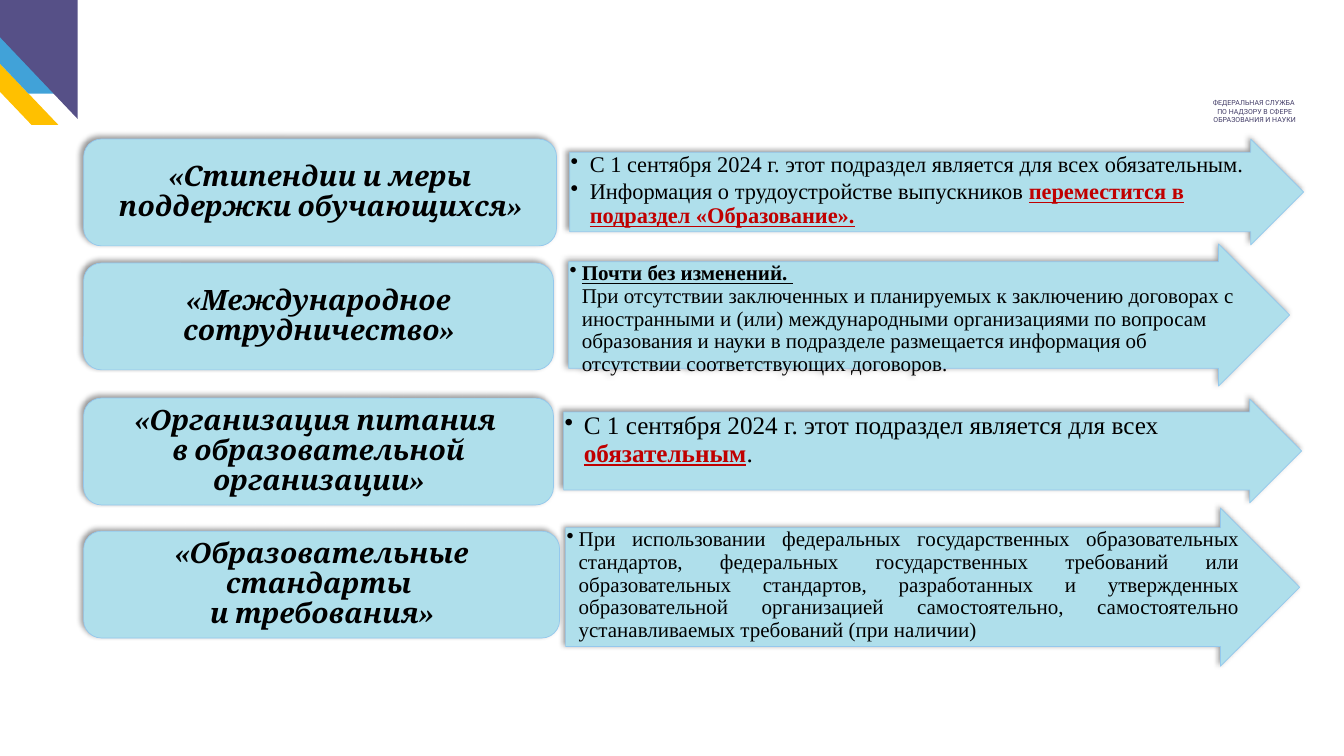
from dataclasses import dataclass

from lxml import etree
from pptx import Presentation
from pptx.dml.color import RGBColor
from pptx.enum.shapes import MSO_SHAPE
from pptx.enum.text import MSO_ANCHOR, PP_ALIGN
from pptx.oxml.ns import qn
from pptx.util import Inches, Pt

ARROW, CARD = MSO_SHAPE.RIGHT_ARROW, MSO_SHAPE.ROUNDED_RECTANGLE
BAND, CORNER = MSO_SHAPE.PARALLELOGRAM, MSO_SHAPE.RIGHT_TRIANGLE
TOP, MIDDLE = MSO_ANCHOR.TOP, MSO_ANCHOR.MIDDLE
LEFT, CENTER, JUSTIFY = PP_ALIGN.LEFT, PP_ALIGN.CENTER, PP_ALIGN.JUSTIFY


@dataclass(frozen=True)
class Theme:
    panel: str = "AFDFEB"
    outline: str = "94C8ED"
    ink: str = "000000"
    accent: str = "C00000"
    purple: str = "565087"
    blue: str = "41A2D8"
    yellow: str = "FFC000"
    agency: str = "413B66"
    body_font: str = "Times New Roman"
    card_font: str = "Cambria"
    agency_font: str = "Roboto"
    card_size: int = 20
    agency_size: int = 5


T = Theme()
PLAIN = {}
STRONG = {"bold": True, "underline": True}
ALERT = {**STRONG, "color": T.accent}

# Each row: card box and text, arrow box, type size, indent, alignment, paragraphs of runs
ROWS = [
    ((0.83, 1.38, 4.69, 1.06), "«Стипендии и меры поддержки обучающихся»",
     (5.65, 1.38, 7.28, 1.05), 16, 0.19, LEFT,
     [[("С 1 сентября 2024 г. этот подраздел является для всех обязательным.", PLAIN)],
      [("Информация о трудоустройстве выпускников ", PLAIN),
       ("переместится в подраздел «Образование».", ALERT)]]),
    ((0.83, 2.61, 4.66, 1.06), "«Международное сотрудничество»",
     (5.64, 2.42, 7.15, 1.41), 15, 0.12, LEFT,
     [[("Почти без изменений. \n", STRONG),
       ("При отсутствии заключенных и планируемых к заключению договорах с иностранными "
        "и (или) международными организациями по вопросам образования и науки в подразделе "
        "размещается информация об отсутствии соответствующих договоров.", PLAIN)]]),
    ((0.83, 3.95, 4.66, 1.06), "«Организация питания \nв образовательной организации»",
     (5.59, 3.96, 7.32, 1.03), 18, 0.19, LEFT,
     [[("С 1 сентября 2024 г. этот подраздел является для всех ", PLAIN),
       ("обязательным", ALERT), (".", PLAIN)]]),
    ((0.83, 5.27, 4.72, 1.06), "«Образовательные стандарты \nи требования»",
     (5.61, 5.04, 7.28, 1.57), 15, 0.12, JUSTIFY,
     [[("При использовании федеральных государственных образовательных стандартов, "
        "федеральных государственных требований или образовательных стандартов, "
        "разработанных и утвержденных образовательной организацией самостоятельно, "
        "самостоятельно устанавливаемых требований (при наличии)", PLAIN)]]),
]


def add_filled(slide, kind, box, color):
    sp = slide.shapes.add_shape(kind, *map(Inches, box))
    sp.shadow.inherit = False
    sp.fill.solid()
    sp.fill.fore_color.rgb = RGBColor.from_string(color)
    sp.line.fill.background()
    return sp


def add_panel(slide, kind, box):
    """Outlined panel with a soft shadow towards the upper left."""
    sp = add_filled(slide, kind, box, T.panel)
    sp.line.color.rgb = RGBColor.from_string(T.outline)
    sp.line.width = Pt(0.5)
    effects = sp._element.spPr.find(qn("a:effectLst"))
    shadow = etree.SubElement(effects, qn("a:outerShdw"), blurRad=str(Pt(4)),
                              dist=str(Pt(3)), dir=str(225 * 60000), rotWithShape="0")
    color = etree.SubElement(shadow, qn("a:srgbClr"), val=T.ink)
    etree.SubElement(color, qn("a:alpha"), val="40000")
    return sp


def set_frame(sp, anchor, margins):
    tf = sp.text_frame
    tf.word_wrap = True
    tf.vertical_anchor = anchor
    for side, margin in zip(("left", "top", "right", "bottom"), margins):
        setattr(tf, f"margin_{side}", Inches(margin))
    return tf


def add_runs(p, runs, base):
    """Write runs; a newline inside a run becomes a line break."""
    for text, extra in runs:
        fmt = {**base, **extra}
        color = RGBColor.from_string(fmt.pop("color"))
        for i, line in enumerate(text.split("\n")):
            if i:
                p.add_line_break()
            if line:
                r = p.add_run()
                r.text = line
                r.font.color.rgb = color
                for name, value in fmt.items():
                    setattr(r.font, name, value)


def add_bullet(p, indent):
    pPr = p._p.get_or_add_pPr()
    pPr.set("marL", str(Inches(indent)))
    pPr.set("indent", str(-Inches(indent)))
    etree.SubElement(pPr, qn("a:buChar"), char="•")


def add_card(slide, box, text):
    sp = add_panel(slide, CARD, box)
    tf = set_frame(sp, MIDDLE, (0.08, 0.04, 0.08, 0.04))
    p = tf.paragraphs[0]
    p.alignment, p.line_spacing = CENTER, 0.9
    add_runs(p, [(text, PLAIN)], {"name": T.card_font, "size": Pt(T.card_size),
                                  "bold": True, "italic": True, "color": T.ink})


def add_arrow(slide, box, size, indent, alignment, paragraphs):
    sp = add_panel(slide, ARROW, box)
    sp.adjustments[0] = 0.75
    tf = set_frame(sp, TOP, (0.01, 0.01, 0.01, 0.01))
    for i, runs in enumerate(paragraphs):
        p = tf.add_paragraph() if i else tf.paragraphs[0]
        p.level = 1
        add_bullet(p, indent)
        p.alignment, p.line_spacing = alignment, 0.9
        if i < len(paragraphs) - 1:
            p.space_after = Pt(2)
        add_runs(p, runs, {"name": T.body_font, "size": Pt(size), "color": T.ink})


def add_corner(slide):
    for box, color in (((-0.83, 0.04, 1.41, 1.2), T.yellow),
                       ((-0.86, -0.27, 1.41, 1.2), T.blue)):
        sp = add_filled(slide, BAND, box, color)
        sp.adjustments[0] = 0.953
        sp._element.spPr.find(qn("a:xfrm")).set("flipH", "1")
    add_filled(slide, CORNER, (-0.36, -0.01, 1.13, 1.19), T.purple).rotation = 180


def add_agency(slide, box):
    sp = slide.shapes.add_textbox(*map(Inches, box))
    tf = set_frame(sp, TOP, (0.1, 0.05, 0.1, 0.05))
    lines = ("ФЕДЕРАЛЬНАЯ СЛУЖБА ", "ПО НАДЗОРУ В СФЕРЕ ОБРАЗОВАНИЯ И НАУКИ")
    for i, line in enumerate(lines):
        p = tf.add_paragraph() if i else tf.paragraphs[0]
        p.alignment = CENTER
        add_runs(p, [(line, PLAIN)], {"name": T.agency_font, "size": Pt(T.agency_size),
                                      "color": T.agency})


def main():
    prs = Presentation()
    prs.slide_width, prs.slide_height = Inches(13.33), Inches(7.5)
    slide = prs.slides.add_slide(prs.slide_layouts[6])

    # Corner ornament and agency name
    add_corner(slide)
    add_agency(slide, (11.77, 0.93, 1.35, 0.35))

    # Subsections with their changes
    for card_box, title, *arrow in ROWS:
        add_arrow(slide, *arrow)
        add_card(slide, card_box, title)

    prs.save("out.pptx")


if __name__ == "__main__":
    main()
